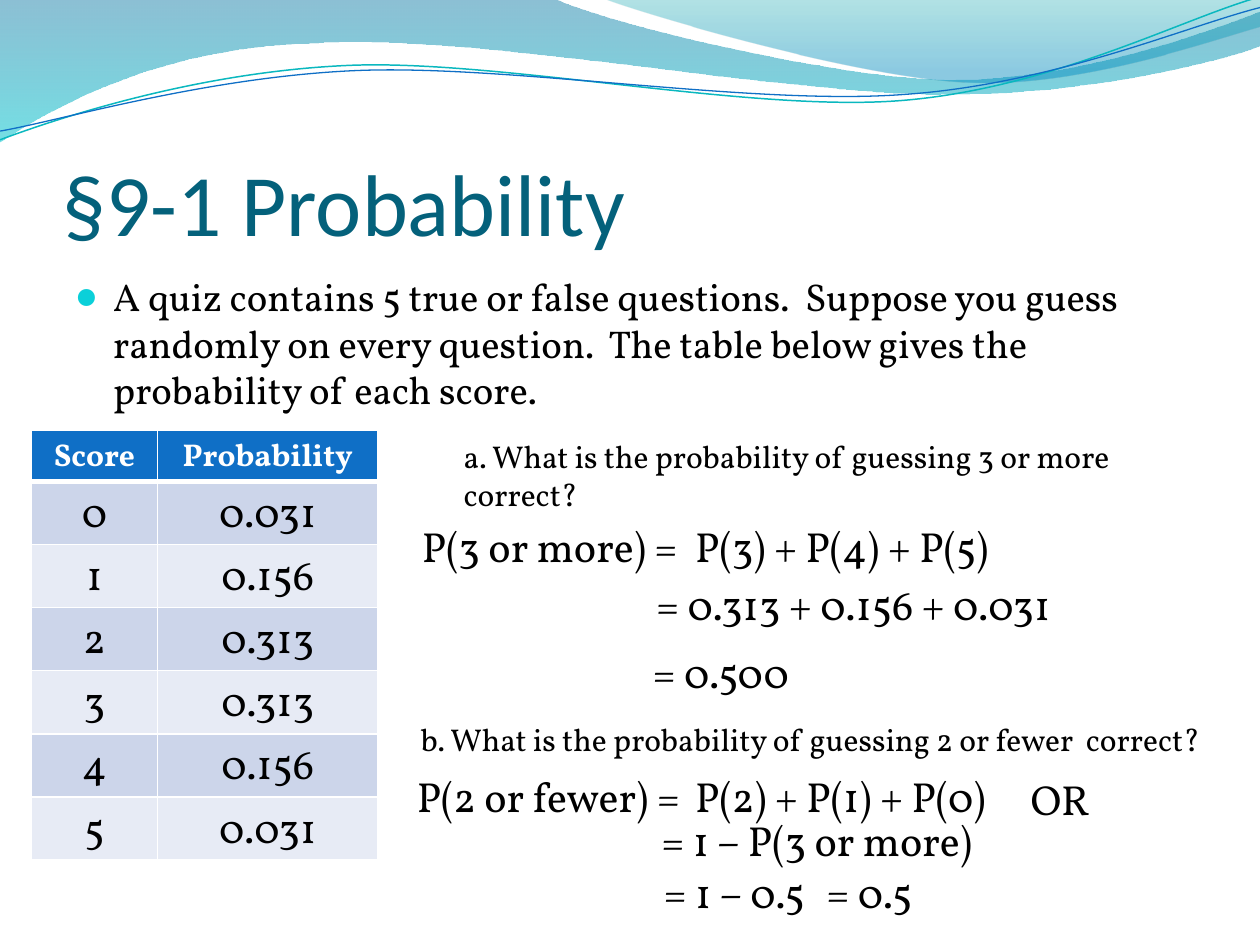
"""Build a slide on quiz score probabilities with a table and two worked questions."""
from dataclasses import dataclass

import lxml.etree
import pptx
import pptx.dml.color
import pptx.enum.text
import pptx.oxml.ns
import pptx.util

Pt = pptx.util.Pt
RGB = pptx.dml.color.RGBColor.from_string
qn = pptx.oxml.ns.qn
Align = pptx.enum.text.PP_ALIGN
Anchor = pptx.enum.text.MSO_ANCHOR


@dataclass(frozen=True)
class Theme:
    heading_font: str = "Calibri"
    body_font: str = "Vollkorn"
    heading: str = "04617B"
    ink: str = "000000"
    white: str = "FFFFFF"
    bullet: str = "0BD0D9"
    header_fill: str = "0F6FC6"
    bands: tuple = ("CCD5EA", "E7EBF5")
    title_size: float = 50
    intro_size: float = 22.1
    working_size: float = 24
    question_size: float = 18


theme = Theme()


def write(frame, text, size, color=theme.ink, font=theme.body_font, bold=False):
    paragraph = frame.paragraphs[0]
    run = paragraph.add_run()
    run.text = text
    run.font.name, run.font.size, run.font.bold = font, Pt(size), bold
    run.font.color.rgb = RGB(color)
    return paragraph


def trace(shapes, start, pieces):
    points = [(Pt(x), Pt(y)) for piece in pieces for x, y in zip(piece[::2], piece[1::2])]
    builder = shapes.build_freeform(Pt(start[0]), Pt(start[1]))
    builder.add_line_segments(points, close=pieces[-1] == start)
    outline = builder.convert_to_shape()
    outline.shadow.inherit = False
    segments = iter(list(outline._element.iter(qn("a:lnTo"))))
    for piece in pieces:
        segment = next(segments)
        if len(piece) == 6:
            curve = lxml.etree.Element(qn("a:cubicBezTo"))
            segment.addprevious(curve)
            for control in (segment, next(segments), next(segments)):
                curve.append(control[0])
                control.getparent().remove(control)
    return outline


deck = pptx.Presentation()
deck.slide_width, deck.slide_height = Pt(720), Pt(540)
slide = deck.slides.add_slide(deck.slide_layouts[6])

waves = [
    ((0, 0), [(316.8, -0.7), (342.7, 12.2, 478.1, 45.4, 545.8, 45.4), (614.2, 45.4, 689.8, 18.7, 720, 6.5),
              (720.7, 25.9), (707.8, 31.7, 626.4, 54.7, 537.1, 54), (447.8, 54, 275, 20.2, 185, 24.5),
              (92.9, 25.9, 33.1, 59.8, -0.7, 81.4), (0, 0)],
     [(0, "0074A1", 45), (1, "00C6CF", 55)]),
    ((344.9, -0.7), [(366.5, 7.9, 491, 44.6, 553.7, 46.8), (616.3, 49.7, 691.9, 23, 720, 15.1),
                     (720, 0), (344.9, -0.7)],
     [(0, "00A1A9", 30), (0.8, "008BBF", 45)]),
]
for start, pieces, stops in waves:
    wave = trace(slide.shapes, start, pieces)
    wave.line.fill.background()
    wave.fill.gradient()
    wave.fill.gradient_angle = 270
    for stop, (position, color, _) in zip(wave.fill.gradient_stops, stops):
        stop.position = position
        stop.color.rgb = RGB(color)
    for swatch, (_, _, opacity) in zip(wave._element.spPr.iter(qn("a:srgbClr")), stops):
        lxml.etree.SubElement(swatch, qn("a:alpha"), val=str(opacity * 1000))

ripples = [
    ((0, 79.9), [(34.6, 67, 113.8, 41, 199.4, 37.4), (284.4, 33.8, 427, 64.1, 513.4, 57.6),
                 (599.8, 51.1, 675.4, 10.8, 718.6, -1.4)], "0AB8BF", 0.85),
    ((0, 74.9), [(33.8, 69.1, 118.1, 43.9, 203.8, 40.3), (290.2, 36.7, 429.8, 60.5, 516.2, 54),
                 (601.9, 48.2, 677.5, 15.1, 720, 4.3)], "0F6FC6", 0.75),
]
for start, pieces, color, width in ripples:
    ripple = trace(slide.shapes, start, pieces)
    ripple.fill.background()
    ripple.line.color.rgb = RGB(color)
    ripple.line.width = Pt(width)

title = slide.shapes.add_textbox(Pt(36), Pt(55.4), Pt(648), Pt(90)).text_frame
title.word_wrap = True
title.vertical_anchor = Anchor.BOTTOM
title.margin_left = title.margin_right = title.margin_bottom = 0
write(title, "§9-1 Probability", theme.title_size, theme.heading, theme.heading_font)

intro = slide.shapes.add_textbox(Pt(36), Pt(152.6), Pt(648), Pt(75.6)).text_frame
intro.word_wrap = True
premise = write(intro, "A quiz contains 5 true or false questions.  Suppose you guess randomly on every question.  "
                "The table below gives the probability of each score.", theme.intro_size)
premise.space_before = Pt(4.4)
marks = premise._p.get_or_add_pPr()
marks.set("marL", str(Pt(21.6)))
marks.set("indent", str(-Pt(21.6)))
bullet_color = lxml.etree.SubElement(marks, qn("a:buClr"))
lxml.etree.SubElement(bullet_color, qn("a:srgbClr"), val=theme.bullet)
lxml.etree.SubElement(marks, qn("a:buSzPct"), val="95000")
lxml.etree.SubElement(marks, qn("a:buFont"), typeface=theme.heading_font)
lxml.etree.SubElement(marks, qn("a:buChar"), char="●")

scores = [("Score", "Probability"), ("0", "0.031"), ("1", "0.156"), ("2", "0.313"),
          ("3", "0.313"), ("4", "0.156"), ("5", "0.031")]
table = slide.shapes.add_table(len(scores), 2, Pt(18), Pt(246), Pt(198), Pt(245.7)).table
table.columns[0].width, table.columns[1].width = Pt(72), Pt(126)
for r, entries in enumerate(scores):
    header = r == 0
    table.rows[r].height = Pt(29.2)
    for c, entry in enumerate(entries):
        cell = table.cell(r, c)
        size = theme.question_size if header else theme.working_size
        color = theme.white if header else theme.ink
        write(cell.text_frame, entry, size, color, bold=header).alignment = Align.CENTER
        borders = cell._tc.get_or_add_tcPr()
        for side in ("L", "R", "T", "B"):
            thick = (header and side == "B") or (r == 1 and side == "T")
            border = lxml.etree.SubElement(borders, qn(f"a:ln{side}"), w=str(Pt(3 if thick else 1)))
            paint = lxml.etree.SubElement(border, qn("a:solidFill"))
            lxml.etree.SubElement(paint, qn("a:srgbClr"), val=theme.white)
        cell.fill.solid()
        cell.fill.fore_color.rgb = RGB(theme.header_fill if header else theme.bands[(r - 1) % 2])

questions = [
    (257.8, 246.2, 450, "a. What is the probability of guessing 3 or more correct?"),
    (233.3, 408.2, 481, "b. What is the probability of guessing 2 or fewer  correct?"),
]
workings = [
    (234, 293.8, 185.8, "P(3 or more) ="),
    (390.2, 293.8, 238.3, "P(3) + P(4) + P(5)"),
    (367.9, 326.9, 339.8, "= 0.313 + 0.156 + 0.031"),
    (365.8, 365.8, 102.2, "= 0.500"),
    (231.1, 437, 185.8, "P(2 or fewer) ="),
    (390.2, 437, 210.2, "P(2) + P(1) + P(0)"),
    (581.8, 438.5, 84.2, "OR"),
    (370.8, 462.2, 229, "= 1 – P(3 or more)"),
    (372.2, 491.8, 101.5, "= 1 – 0.5"),
    (465.1, 491.8, 101.5, "= 0.5"),
]
for lines, size, height in ((questions, theme.question_size, 28.8), (workings, theme.working_size, 36)):
    for left, top, width, text in lines:
        step = slide.shapes.add_textbox(Pt(left), Pt(top), Pt(width), Pt(height)).text_frame
        step.word_wrap = True
        write(step, text, size)

deck.save("out.pptx")
